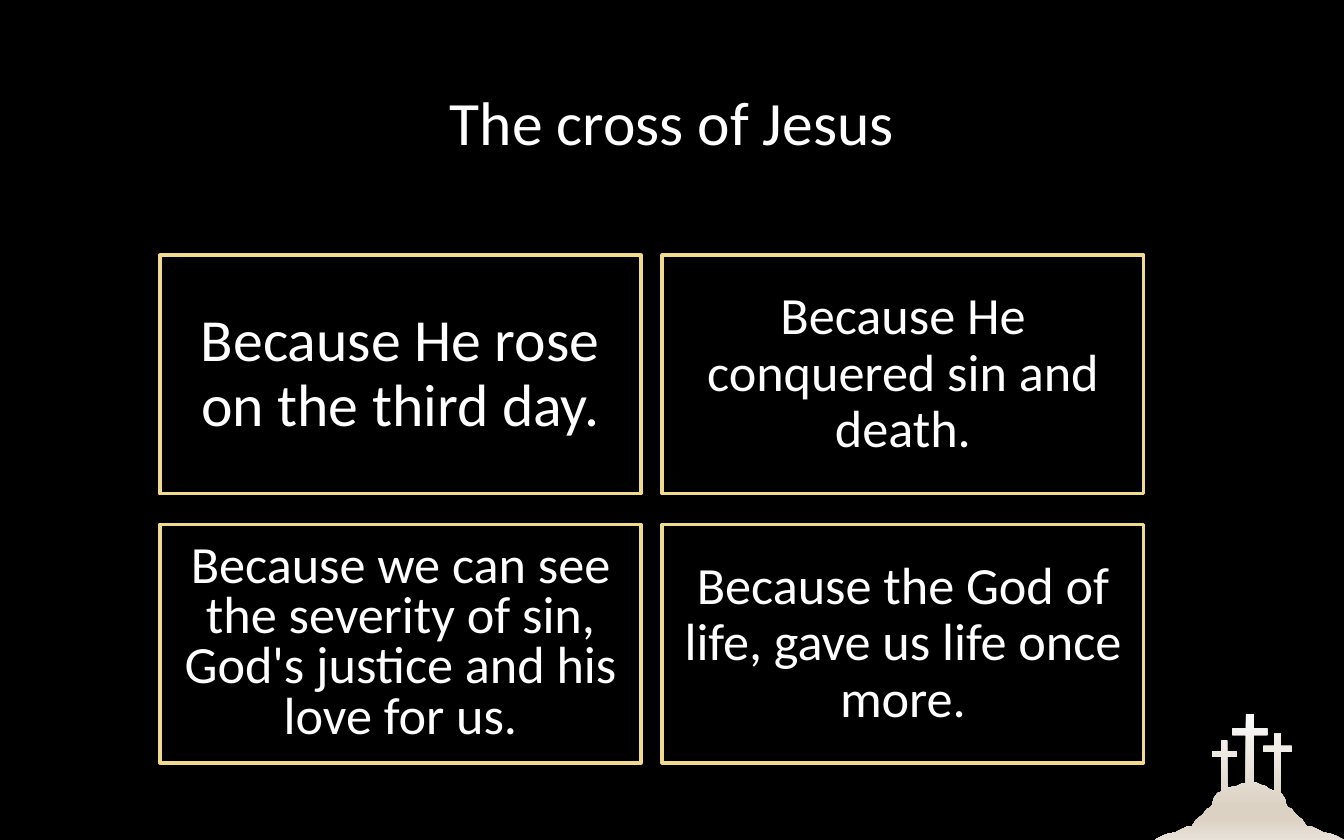
from copy import deepcopy
from pptx import Presentation
from pptx.dml.color import RGBColor as RGB
from pptx.enum.shapes import MSO_SHAPE as Shape
from pptx.enum.text import MSO_ANCHOR as Anchor, MSO_AUTO_SIZE as Auto, PP_ALIGN as Align
from pptx.util import Pt

# Content: card text, type size, line spacing
TITLE = "The cross of Jesus"
CARDS = [
    ("Because He rose on the third day.", 32, 0.9),
    ("Because He conquered sin and death.", 28, 0.9),
    ("Because we can see the severity of sin, God's justice and his love for us.", 28, 0.8),
    ("Because the God of life, gave us life once more.", 28, 0.9),
]

THEME = {
    "font": "Calibri", "title": 33, "back": "000000", "text": "FFFFFF",
    "edge": "EFDA8E", "rule": 2,
    "stone": [(0, "FBFAF9"), (0.74, "DCD2C4"), (0.83, "DCD2C4"), (1, "E8E1D8")],
}

# Grid of cards
LEFT, TOP, WIDE, HIGH = 85.6, 136.8, 257.8, 127.6
STEP_X, STEP_Y = 269.2, 144.2

# Hill: left slope from the foot up; the right slope mirrors it
SLOPE = [
    (618.5, 450), (622.8, 447.8), (626.4, 446.4), (629.3, 446.2), (631.4, 445),
    (635.8, 442.9), (638.6, 442.6), (640.8, 439.2), (644.4, 436.3), (646.6, 433.4),
    (648.4, 432.6), (649.4, 431.3), (650.2, 427.7), (652.3, 424.8),
]
MID = 669.25
# Ridge between neighbouring crosses
RIDGE_A = [(658.1, 421.9), (662.4, 421.2), (665.3, 419.8)]
RIDGE_B = [(672.5, 419), (675.4, 420.5), (678.2, 421.2), (679.7, 422.6), (681.8, 423.4)]


def cross(stem, arms, top, bar, feet):
    """Outline of a cross, from its left foot to its right foot."""
    (a, b), (l, r), (t, u) = stem, arms, bar
    return [(a, feet[0]), (a, u), (l, u), (l, t), (a, t), (a, top),
            (b, top), (b, t), (r, t), (r, u), (b, u), (b, feet[1])]


def style(frame, text, size, space, before=0):
    frame.text = text
    frame.word_wrap = True
    frame.auto_size = Auto.NONE
    frame.vertical_anchor = Anchor.MIDDLE
    para = frame.paragraphs[0]
    para.alignment = Align.CENTER
    para.line_spacing = space
    para.space_before = Pt(before)
    font = para.runs[0].font
    font.name, font.size = THEME["font"], Pt(size)
    font.color.rgb = RGB.from_string(THEME["text"])
    return para


def place(shape, *box):
    shape.left, shape.top, shape.width, shape.height = map(Pt, box)


deck = Presentation()
deck.slide_width, deck.slide_height = Pt(720), Pt(450)
slide = deck.slides.add_slide(deck.slide_layouts[1])
slide.background.fill.solid()
slide.background.fill.fore_color.rgb = RGB.from_string(THEME["back"])

# Title
title = slide.shapes.title
place(title, 49.7, 23.8, 620.6, 87)
style(title.text_frame, TITLE, THEME["title"], 0.9)

# Cards: the body placeholder holds the first
for i, (text, size, space) in enumerate(CARDS):
    row, col = divmod(i, 2)
    box = (LEFT + col * STEP_X, TOP + row * STEP_Y, WIDE, HIGH)
    if i == 0:
        card = slide.placeholders[1]
        place(card, *box)
    else:
        card = slide.shapes.add_shape(Shape.RECTANGLE, *map(Pt, box))
        card.shadow.inherit = False
    card.fill.background()
    card.line.color.rgb = RGB.from_string(THEME["edge"])
    card.line.width = Pt(THEME["rule"])
    para = style(card.text_frame, text, size, space, 7.5)
    if i == 0:
        # No bullet or hanging indent
        props = para._p.get_or_add_pPr()
        props.set("marL", "0")
        props.set("indent", "0")
        props.insert_element_before(
            props.makeelement("{http://schemas.openxmlformats.org/drawingml/2006/main}buNone"),
            "a:tabLst", "a:defRPr", "a:extLst")

# Hill with three crosses
line = (
    SLOPE
    + cross((654.5, 657.4), (649.4, 662.4), 396.7, (402.5, 405.4), (424.1, 422.6))
    + RIDGE_A
    + cross((667.4, 671.8), (660.2, 679), 382.3, (390.2, 393.8), (419.8, 419))
    + RIDGE_B
    + cross((682.6, 686.2), (676.8, 691.9), 393.1, (399.6, 402.5), (423.4, 424.8))
    + [(2 * MID - x, y) for x, y in reversed(SLOPE)]
)
dots = [(Pt(x), Pt(y)) for x, y in line]
pen = slide.shapes.build_freeform(*dots[0])
pen.add_line_segments(dots[1:], close=True)
hill = pen.convert_to_shape()
hill.shadow.inherit = False
hill.line.fill.background()
hill.fill.gradient()
hill.fill.gradient_angle = 270
stops = hill.fill._fill._gradFill.gsLst
for _ in THEME["stone"][2:]:
    stops.append(deepcopy(stops[0]))
for stop, (spot, tone) in zip(hill.fill.gradient_stops, THEME["stone"]):
    stop.position = spot
    stop.color.rgb = RGB.from_string(tone)

deck.save("out.pptx")
